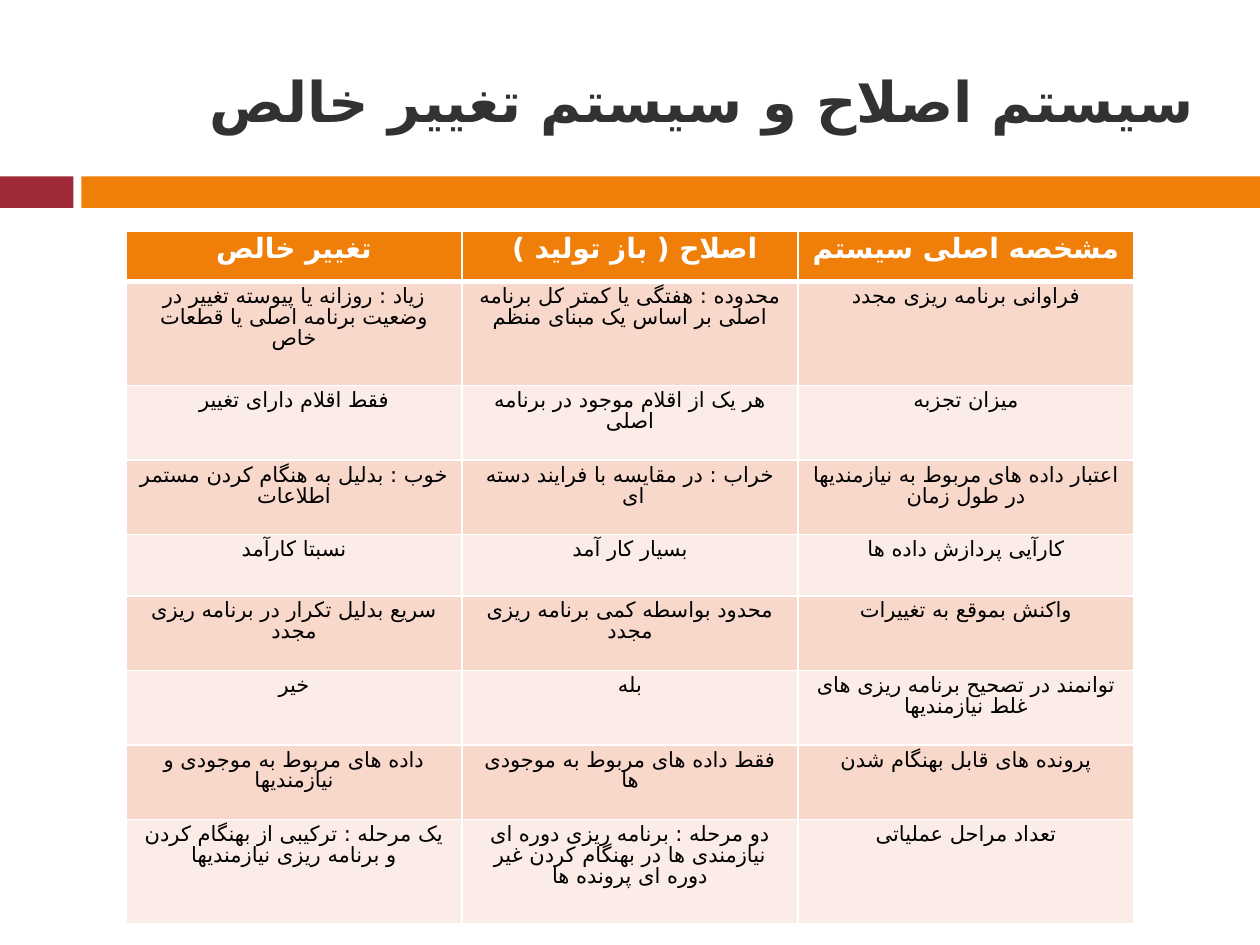
from lxml import etree
from pptx import Presentation
from pptx.dml.color import RGBColor
from pptx.enum import shapes, text
from pptx.oxml import ns
from pptx.util import Pt

WHITE = RGBColor(0xFF, 0xFF, 0xFF)
BLACK = RGBColor(0, 0, 0)
CHARCOAL = RGBColor(0x32, 0x32, 0x32)
CRIMSON = RGBColor(0x9F, 0x29, 0x36)
ORANGE = RGBColor(0xF0, 0x7F, 0x09)
PEACH = RGBColor(0xF9, 0xD8, 0xCC)
PALE = RGBColor(0xFC, 0xEC, 0xE7)

FONT = "Cabin"
PERSIAN_FONT = "DejaVu Sans"
TITLE = "سیستم اصلاح و سیستم تغییر خالص"
HEADINGS = ("تغییر خالص", "اصلاح ( باز تولید ) ", "مشخصه اصلی سیستم ")
BODY = (
    ("زیاد : روزانه یا پیوسته تغییر در وضعیت برنامه اصلی یا قطعات خاص",
     "محدوده : هفتگی یا کمتر کل برنامه اصلی بر اساس یک مبنای منظم",
     "فراوانی برنامه ریزی مجدد"),
    ("فقط اقلام دارای تغییر",
     "هر یک از اقلام موجود در برنامه اصلی",
     "میزان تجزبه"),
    ("خوب : بدلیل به هنگام کردن مستمر اطلاعات",
     "خراب : در مقایسه با فرایند دسته ای ",
     "اعتبار داده های مربوط به نیازمندیها در طول زمان"),
    ("نسبتا کارآمد", "بسیار کار آمد", "کارآیی پردازش داده ها"),
    ("سریع بدلیل تکرار در برنامه ریزی مجدد",
     "محدود بواسطه کمی برنامه ریزی مجدد",
     "واکنش بموقع به تغییرات"),
    ("خیر", "بله", "توانمند در تصحیح برنامه ریزی های غلط نیازمندیها"),
    ("داده های مربوط به موجودی و نیازمندیها",
     "فقط داده های مربوط به موجودی ها",
     "پرونده های قابل بهنگام شدن"),
    ("یک مرحله : ترکیبی از بهنگام کردن و برنامه ریزی نیازمندیها",
     "دو مرحله : برنامه ریزی دوره ای نیازمندی ها در بهنگام کردن غیر دوره ای پرونده ها",
     "تعداد مراحل عملیاتی"),
)
ROW_HEIGHTS = (28.8, 59.5, 42.6, 42.6, 35, 42.6, 42.6, 42.6, 59.5)

TITLE_FORMAT = {"size": Pt(32), "bold": True, "name": FONT}
HEADING_FORMAT = {"size": Pt(16), "bold": True, "name": FONT}
BODY_FORMAT = {"size": Pt(12), "bold": False, "name": FONT}


def write_persian(frame, wording, font_format, color, alignment):
    """Fill the frame with one right-to-left paragraph."""
    para = frame.paragraphs[0]
    para.alignment = alignment
    para._p.get_or_add_pPr().set("rtl", "1")
    span = para.add_run()
    span.text = wording
    for name, value in font_format.items():
        setattr(span.font, name, value)
    span.font.color.rgb = color
    script_font = etree.SubElement(span._r.get_or_add_rPr(), ns.qn("a:cs"))
    script_font.set("typeface", PERSIAN_FONT)
    return para


def add_bar(page, left, width, color):
    bar = page.shapes.add_shape(
        shapes.MSO_SHAPE.RECTANGLE, Pt(left), Pt(100.8), Pt(width), Pt(18))
    bar.shadow.inherit = False
    bar.fill.solid()
    bar.fill.fore_color.rgb = color
    bar.line.fill.background()


def set_title(page):
    title = page.shapes.title
    place = {"left": Pt(48), "top": Pt(18), "width": Pt(642), "height": Pt(78)}
    for name, value in place.items():
        setattr(title, name, value)
    title.text_frame.vertical_anchor = text.MSO_ANCHOR.MIDDLE
    write_persian(title.text_frame, TITLE, TITLE_FORMAT, CHARCOAL,
                  text.PP_ALIGN.RIGHT)


def add_borders(cell, widths):
    """Draw white cell edges; widths maps an edge tag to points."""
    properties = cell._tc.get_or_add_tcPr()
    for edge, width in widths.items():
        line = etree.SubElement(properties, ns.qn(f"a:{edge}"), w=str(Pt(width)))
        fill = etree.SubElement(line, ns.qn("a:solidFill"))
        etree.SubElement(fill, ns.qn("a:srgbClr"), val=str(WHITE))


def format_cell(cell, row, wording):
    heading = row == 0
    add_borders(cell, {"lnL": 1, "lnR": 1,
                       "lnT": 3 if row == 1 else 1,
                       "lnB": 3 if heading else 1})
    cell.fill.solid()
    cell.fill.fore_color.rgb = ORANGE if heading else (PALE, PEACH)[row % 2]
    font_format = HEADING_FORMAT if heading else BODY_FORMAT
    para = write_persian(cell.text_frame, wording, font_format,
                         WHITE if heading else BLACK, text.PP_ALIGN.CENTER)
    para.line_spacing = font_format["size"]


def add_comparison(page):
    rows = (HEADINGS, *BODY)
    table = page.shapes.add_table(
        len(rows), len(HEADINGS), Pt(72), Pt(132), Pt(576), Pt(396)).table
    for column in table.columns:
        column.width = Pt(576 / len(HEADINGS))
    for index, (wordings, height) in enumerate(zip(rows, ROW_HEIGHTS)):
        table.rows[index].height = Pt(height)
        for cell, wording in zip(table.rows[index].cells, wordings):
            format_cell(cell, index, wording)


def main():
    deck = Presentation()
    deck.slide_width, deck.slide_height = Pt(720), Pt(540)
    page = deck.slides.add_slide(deck.slide_layouts.get_by_name("Title Only"))
    add_bar(page, 0, 42, CRIMSON)
    add_bar(page, 46.5, 673.5, ORANGE)
    set_title(page)
    add_comparison(page)
    deck.save("out.pptx")


if __name__ == "__main__":
    main()
